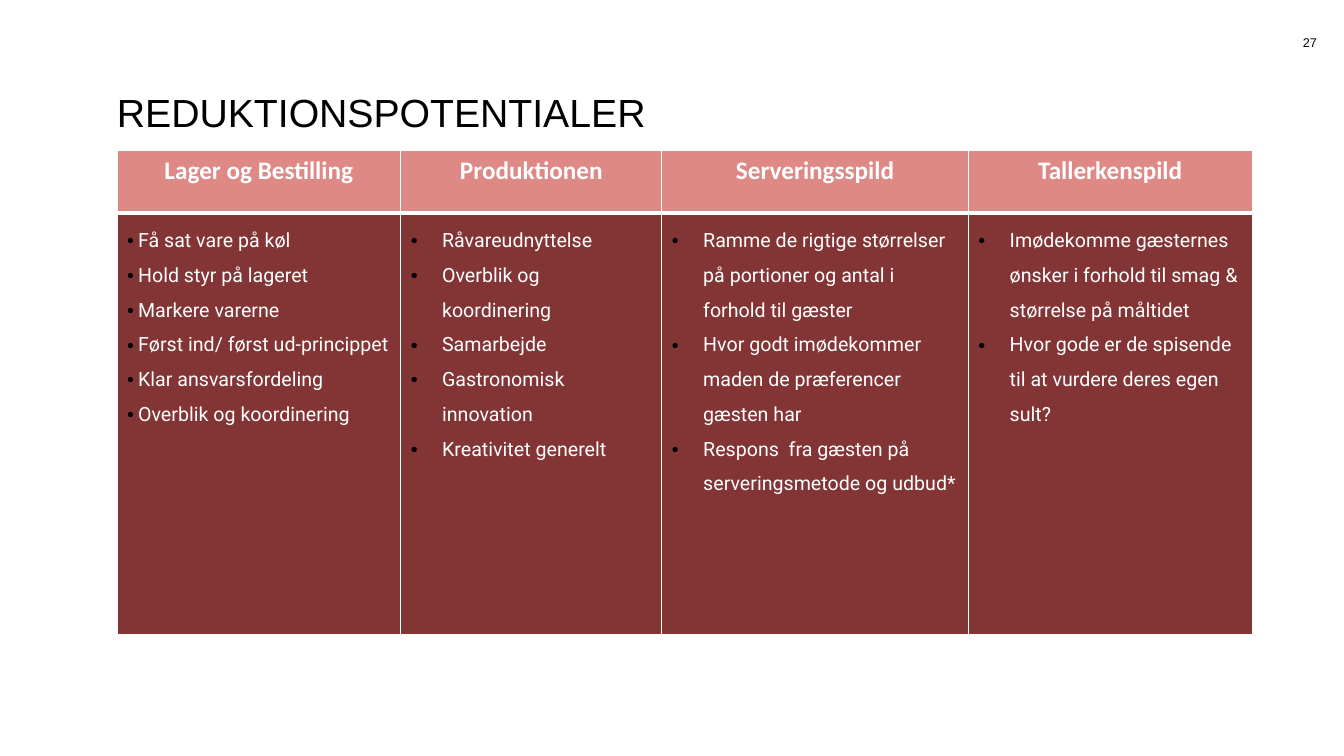
from lxml import etree
from pptx import Presentation, util as u
from pptx.dml.color import RGBColor
from pptx.enum import text
from pptx.oxml import ns

COLORS = {"ink": "000000", "paper": "FFFFFF", "heading": "DE8986", "body": "833434"}

deck = Presentation()
deck.slide_width, deck.slide_height = u.Inches(13.33), u.Inches(7.5)
slide = deck.slides.add_slide(deck.slide_layouts[6])
left = u.Inches(1.16)


def write(frame, lines, size, font, color, bold=False, align="LEFT",
          spacing=None, hang=None):
    """Fill a text frame; a hang in inches makes the lines bullets."""
    frame.word_wrap = True
    for number, line in enumerate(lines):
        para = frame.add_paragraph() if number else frame.paragraphs[0]
        if hang:
            props = para._p.get_or_add_pPr()
            props.set("marL", str(u.Inches(hang)))
            props.set("indent", str(-u.Inches(hang)))
            bullet_color = etree.SubElement(props, ns.qn("a:buClr"))
            etree.SubElement(bullet_color, ns.qn("a:srgbClr"), val=COLORS["ink"])
            etree.SubElement(props, ns.qn("a:buFont"), typeface="Arial")
            etree.SubElement(props, ns.qn("a:buChar"), char="•")
        para.alignment = getattr(text.PP_ALIGN, align)
        para.line_spacing = spacing
        run = para.add_run()
        run.text = line
        run.font.size, run.font.name, run.font.bold = u.Pt(size), font, bold
        run.font.color.rgb = RGBColor.from_string(COLORS[color])


def paint(cell, fill, bottom):
    """Give a cell white borders and a plain fill."""
    props = cell._tc.get_or_add_tcPr()
    for side, width in {"L": 1, "R": 1, "T": 1, "B": bottom}.items():
        edge = etree.SubElement(props, ns.qn(f"a:ln{side}"), w=str(u.Pt(width)))
        solid = etree.SubElement(edge, ns.qn("a:solidFill"))
        etree.SubElement(solid, ns.qn("a:srgbClr"), val=COLORS["paper"])
    cell.fill.solid()
    cell.fill.fore_color.rgb = RGBColor.from_string(COLORS[fill])


# Title
title = slide.shapes.add_textbox(left, u.Inches(0.38), u.Inches(10.93), u.Inches(0.97)).text_frame
title.margin_left = title.margin_right = title.margin_top = title.margin_bottom = 0
title.vertical_anchor = text.MSO_ANCHOR.BOTTOM
write(title, ["REDUKTIONSPOTENTIALER"], 28, "Arial", "ink", spacing=0.9)

# Page number
page = slide.shapes.add_textbox(u.Inches(12.42), u.Inches(0.32), u.Inches(0.74), u.Inches(0.2)).text_frame
page.vertical_anchor = text.MSO_ANCHOR.MIDDLE
write(page, ["27"], 9, "Arial", "ink", align="RIGHT")

# Stages: heading, share of the table width in percent, bullet hang, measures
stages = [
    ("Lager og Bestilling", 25, 0.11, [
        "Få sat vare på køl", "Hold styr på lageret", "Markere varerne",
        "Først ind/ først ud-princippet", "Klar ansvarsfordeling",
        "Overblik og koordinering"]),
    ("Produktionen", 23, 0.31, [
        "Råvareudnyttelse", "Overblik og koordinering", "Samarbejde",
        "Gastronomisk innovation", "Kreativitet generelt"]),
    ("Serveringsspild", 27, 0.31, [
        "Ramme de rigtige størrelser på portioner og antal i forhold til gæster",
        "Hvor godt imødekommer maden de præferencer gæsten har",
        "Respons  fra gæsten på serveringsmetode og udbud*"]),
    ("Tallerkenspild", 25, 0.31, [
        "Imødekomme gæsternes ønsker i forhold til smag & størrelse på måltidet",
        "Hvor gode er de spisende til at vurdere deres egen sult?"]),
]

# Table of stages
table_width = u.Inches(11.26)
potentials = slide.shapes.add_table(2, len(stages), left, u.Inches(1.49),
                                    table_width, u.Inches(4.81)).table
potentials.first_row = potentials.horz_banding = False
potentials.rows[0].height, potentials.rows[1].height = u.Inches(0.62), u.Inches(4.19)

for column, (heading, share, hang, measures) in enumerate(stages):
    potentials.columns[column].width = int(table_width * share / 100)
    top, below = potentials.cell(0, column), potentials.cell(1, column)
    paint(top, "heading", bottom=3)
    paint(below, "body", bottom=1)
    write(top.text_frame, [heading], 18, "Calibri", "paper", bold=True, align="CENTER")
    write(below.text_frame, measures, 14, "Roboto", "paper", spacing=1.5, hang=hang)

deck.save("out.pptx")
